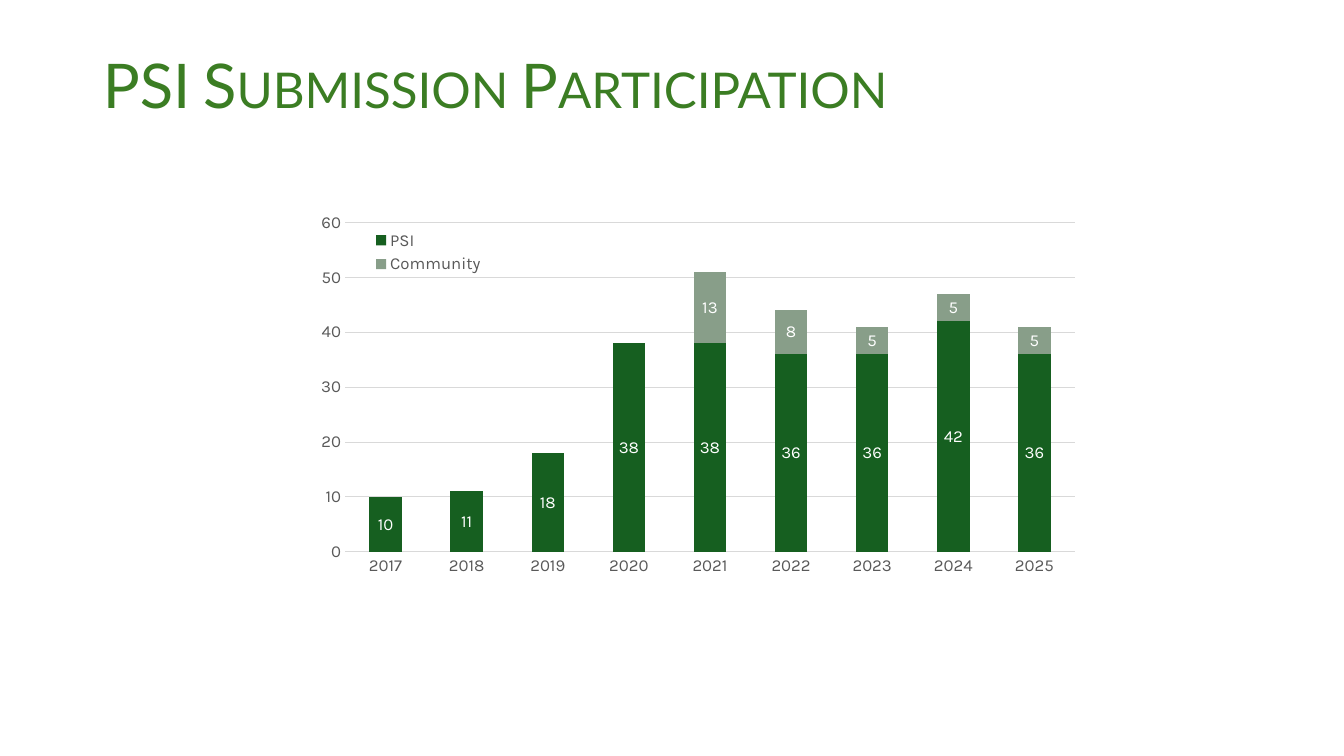
"""Build the slide on PSI submission participation."""
import pptx
import pptx.chart.data
import pptx.dml.color
import pptx.enum.chart
import pptx.enum.text
import pptx.oxml
import pptx.oxml.ns
import pptx.util

Inches = pptx.util.Inches
Pt = pptx.util.Pt
RGBColor = pptx.dml.color.RGBColor

TITLE_GREEN = RGBColor(0x3B, 0x7D, 0x23)
PSI_GREEN = RGBColor(0x16, 0x5F, 0x20)
COMMUNITY_GREEN = RGBColor(0x88, 0x9E, 0x89)
GRID_GREY = RGBColor(0xD9, 0xD9, 0xD9)
LABEL_GREY = RGBColor(0x59, 0x59, 0x59)
WHITE = RGBColor(0xFF, 0xFF, 0xFF)

YEARS = [str(year) for year in range(2017, 2026)]
SUBMISSIONS = [
    ("PSI", [10, 11, 18, 38, 38, 36, 36, 42, 36], PSI_GREEN),
    ("Community", [None] * 4 + [13, 8, 5, 5, 5], COMMUNITY_GREEN),
]
TITLE_FORMAT = {"name": "Lato", "size": Pt(44), "color": TITLE_GREEN}
AXIS_FORMAT = {"name": "Karla", "size": Pt(12), "color": LABEL_GREY}
VALUE_FORMAT = {**AXIS_FORMAT, "color": WHITE}


def format_font(font, values):
    """Set font attributes from a dict of format values."""
    for name, value in values.items():
        if name == "color":
            font.color.rgb = value
        else:
            setattr(font, name, value)


def format_line(line):
    """Give an axis or grid line its thin grey stroke."""
    line.color.rgb = GRID_GREY
    line.width = Pt(0.75)


def place(part, index, x, y, w, h, inner=False):
    """Set the manual layout of a chart part, in fractions of the chart."""
    for old in part.findall(pptx.oxml.ns.qn("c:layout")):
        part.remove(old)
    target = '<c:layoutTarget val="inner"/>' if inner else ""
    modes = "".join(f'<c:{side}Mode val="edge"/>' for side in "xy")
    sizes = "".join(f'<c:{side} val="{value}"/>'
                    for side, value in zip("xywh", (x, y, w, h)))
    part.insert(index, pptx.oxml.parse_xml(
        f'<c:layout {pptx.oxml.ns.nsdecls("c")}><c:manualLayout>'
        f"{target}{modes}{sizes}</c:manualLayout></c:layout>"))


def write_title(slide):
    """Move the title placeholder and fill it with small capitals."""
    title = slide.shapes.title
    box = {"left": 0.92, "top": 0.4, "width": 11.5, "height": 0.96}
    for name, value in box.items():
        setattr(title, name, Inches(value))
    title.text_frame.vertical_anchor = pptx.enum.text.MSO_ANCHOR.MIDDLE
    paragraph = title.text_frame.paragraphs[0]
    paragraph.alignment = pptx.enum.text.PP_ALIGN.LEFT
    paragraph.line_spacing = 0.9
    heading = paragraph.add_run()
    heading.text = "PSI Submission Participation"
    format_font(heading.font, TITLE_FORMAT)
    heading._r.get_or_add_rPr().set("cap", "small")


def format_axes(chart):
    """Style the year axis, the count axis and the grid."""
    years, counts = chart.category_axis, chart.value_axis
    for axis in (years, counts):
        axis.major_tick_mark = pptx.enum.chart.XL_TICK_MARK.NONE
        axis.minor_tick_mark = pptx.enum.chart.XL_TICK_MARK.NONE
        format_font(axis.tick_labels.font, AXIS_FORMAT)
    format_line(years.format.line)
    counts.format.line.fill.background()
    counts.has_major_gridlines = True
    format_line(counts.major_gridlines.format.line)
    scale = {"minimum_scale": 0, "maximum_scale": 60, "major_unit": 10}
    for name, value in scale.items():
        setattr(counts, name, value)
    counts.tick_labels.number_format = "0"
    counts.tick_labels.number_format_is_linked = False


def format_columns(plot):
    """Colour the stacked columns and label their values."""
    for name, value in {"gap_width": 150, "overlap": 100,
                        "vary_by_categories": False}.items():
        setattr(plot, name, value)
    for series, (_, _, color) in zip(plot.series, SUBMISSIONS):
        series.format.fill.solid()
        series.format.fill.fore_color.rgb = color
        series.data_labels.show_value = True
        format_font(series.data_labels.font, VALUE_FORMAT)


def add_legend(chart):
    """Put the legend inside the top left of the plot."""
    chart.has_legend = True
    legend = chart.legend
    legend.position = pptx.enum.chart.XL_LEGEND_POSITION.BOTTOM
    legend.include_in_layout = False
    format_font(legend.font, AXIS_FORMAT)
    place(legend._element, 1, 0.09, 0.07, 0.15, 0.13)


def add_participation_chart(slide):
    """Add the stacked columns of submissions per year."""
    data = pptx.chart.data.CategoryChartData(number_format="0")
    data.categories = YEARS
    for name, counts, _ in SUBMISSIONS:
        data.add_series(name, counts)
    chart = slide.shapes.add_chart(
        pptx.enum.chart.XL_CHART_TYPE.COLUMN_STACKED,
        Inches(2.95), Inches(1.97), Inches(7.87), Inches(3.94), data).chart
    chart.has_title = False
    format_font(chart.font, {"name": "Karla", "size": Pt(10)})
    format_axes(chart)
    format_columns(chart.plots[0])
    add_legend(chart)
    plot_area = chart._chartSpace.chart.plotArea
    place(plot_area, 0, 0.06, 0.06, 0.92, 0.83, inner=True)


def main():
    """Build and save the presentation."""
    deck = pptx.Presentation()
    deck.slide_width, deck.slide_height = Inches(13.33), Inches(7.5)
    slide = deck.slides.add_slide(deck.slide_layouts[5])
    write_title(slide)
    add_participation_chart(slide)
    deck.save("out.pptx")


if __name__ == "__main__":
    main()
